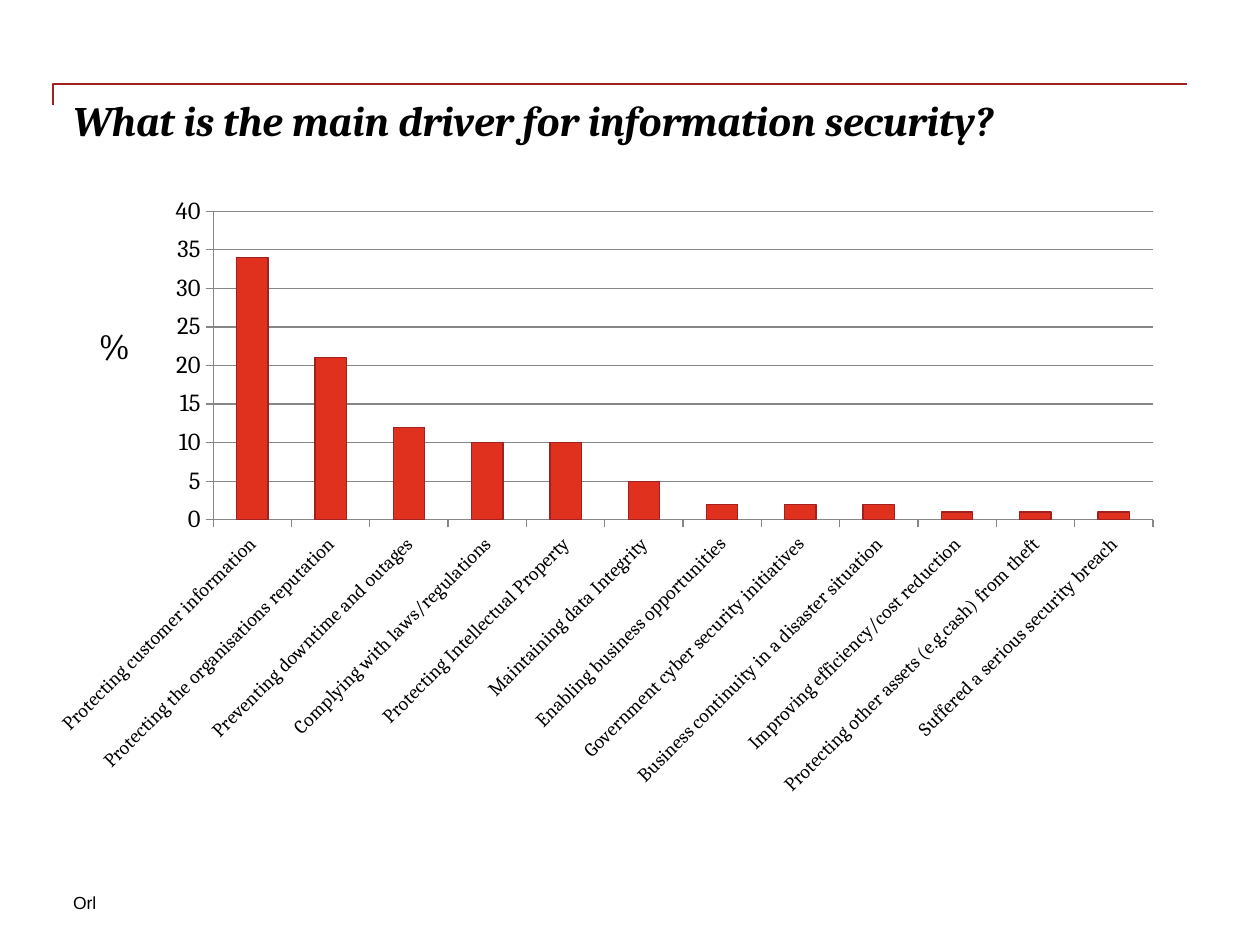
from lxml import etree
from pptx import Presentation
from pptx import util as u
from pptx.chart.data import CategoryChartData
from pptx.dml.color import RGBColor
from pptx.enum import chart as ch, text
from pptx.oxml import ns

PX_PER_INCH = 126
COLOURS = {"text": "000000", "bar": "E0301E", "rule": "A32020", "grid": "868686"}

DRIVERS = {
    "Protecting customer information": 34,
    "Protecting the organisations reputation": 21,
    "Preventing downtime and outages": 12,
    "Complying with laws/regulations": 10,
    "Protecting Intellectual Property": 10,
    "Maintaining data Integrity": 5,
    "Enabling business opportunities": 2,
    "Government cyber security initiatives": 2,
    "Business continuity in a disaster situation": 2,
    "Improving efficiency/cost reduction": 1,
    "Protecting other assets (e.g.cash) from theft": 1,
    "Suffered a serious security breach": 1,
}


def px(length):
    return u.Emu(round(length * 914400 / PX_PER_INCH))


def colour(name):
    return RGBColor.from_string(COLOURS[name])


def style_font(font, name, size, bold=False, italic=False):
    font.name, font.size = name, u.Pt(size)
    font.bold, font.italic = bold, italic
    font.color.rgb = colour("text")


def style_line(line, name, width):
    line.color.rgb = colour(name)
    line.width = u.Pt(width)


def add_label(slide, box, words, font, size, align=text.PP_ALIGN.LEFT, **emphasis):
    frame = slide.shapes.add_textbox(*map(px, box)).text_frame
    frame.word_wrap = True
    frame.margin_left = frame.margin_right = frame.margin_top = frame.margin_bottom = 0
    frame.text = words
    paragraph = frame.paragraphs[0]
    paragraph.alignment = align
    style_font(paragraph.runs[0].font, font, size, **emphasis)


def add_title_rule(slide, points):
    start, *rest = [(px(x), px(y)) for x, y in points]
    builder = slide.shapes.build_freeform(*start)
    builder.add_line_segments(rest, close=False)
    rule = builder.convert_to_shape()
    rule.shadow.inherit = False
    rule.fill.background()
    style_line(rule.line, "rule", 1)


def style_axis(axis, size):
    axis.major_tick_mark = ch.XL_TICK_MARK.OUTSIDE
    axis.minor_tick_mark = ch.XL_TICK_MARK.NONE
    style_font(axis.tick_labels.font, "Cambria", size)
    style_line(axis.format.line, "grid", 0.75)


def place_plot(chart, **fractions):
    """Fix the inner plot area as fractions of the chart."""
    plot_area = chart._chartSpace.chart.plotArea
    for old in plot_area.findall(ns.qn("c:layout")):
        plot_area.remove(old)
    layout = etree.Element(ns.qn("c:layout"))
    manual = etree.SubElement(layout, ns.qn("c:manualLayout"))
    settings = {"layoutTarget": "inner", "xMode": "edge", "yMode": "edge", **fractions}
    for tag, value in settings.items():
        etree.SubElement(manual, ns.qn(f"c:{tag}")).set("val", str(value))
    plot_area.insert(0, layout)


def add_driver_chart(slide, box):
    data = CategoryChartData()
    data.categories = list(DRIVERS)
    data.add_series("Series 1", list(DRIVERS.values()))
    chart = slide.shapes.add_chart(
        ch.XL_CHART_TYPE.COLUMN_CLUSTERED, *map(px, box), data).chart
    chart.has_legend = chart.has_title = False
    style_font(chart.font, "Arial", 18)

    # Columns
    plot = chart.plots[0]
    plot.gap_width = 150
    plot.vary_by_categories = False
    columns = plot.series[0].format
    columns.fill.solid()
    columns.fill.fore_color.rgb = colour("bar")
    style_line(columns.line, "rule", 0.75)

    # Axes, with slanted category labels
    drivers, percent = chart.category_axis, chart.value_axis
    style_axis(drivers, 11)
    drivers.tick_labels._element.txPr.bodyPr.set("rot", str(-45 * 60000))
    style_axis(percent, 14)
    percent.minimum_scale, percent.maximum_scale, percent.major_unit = 0, 40, 5
    percent.has_major_gridlines = True
    style_line(percent.major_gridlines.format.line, "grid", 0.75)
    place_plot(chart, x=0.156, y=0.042, w=0.823, h=0.494)


def main():
    deck = Presentation()
    deck.slide_width, deck.slide_height = px(1260), px(945)
    slide = deck.slides.add_slide(deck.slide_layouts[6])

    # Footer and heading
    add_label(slide, (73, 892, 357, 21), "Orl", "Arial", 10)
    add_title_rule(slide, [(53, 105), (53, 84), (1187, 84)])
    add_label(slide, (73, 95, 1113, 126),
              "What is the main driver for information security?",
              "Cambria", 24, bold=True, italic=True)

    # Chart and its unit
    add_driver_chart(slide, (35, 185, 1142, 625))
    add_label(slide, (95, 324, 39, 59), "%", "Cambria", 20, text.PP_ALIGN.CENTER)

    deck.save("out.pptx")


if __name__ == "__main__":
    main()
